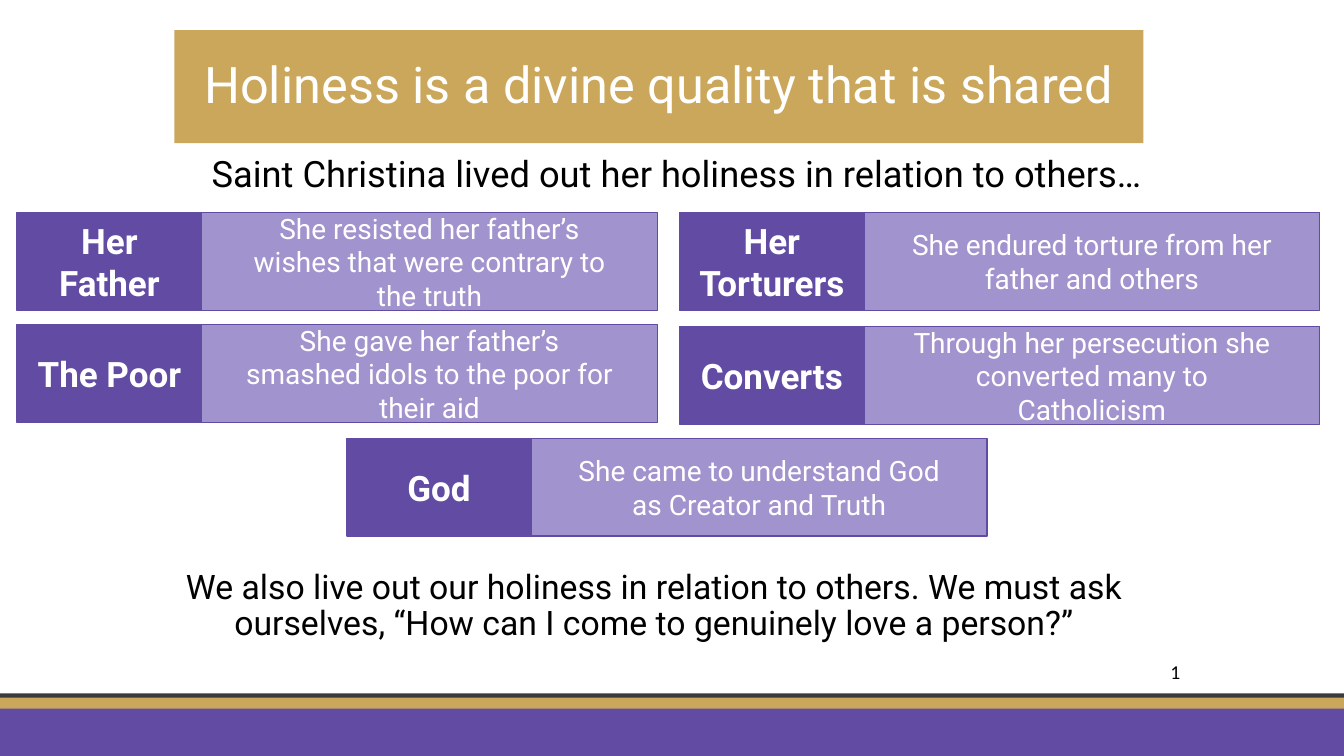
from pptx import Presentation
from pptx.dml.color import RGBColor
from pptx.enum import shapes, text
from pptx.util import Inches, Pt

WHITE = RGBColor(0xFF, 0xFF, 0xFF)
BLACK = RGBColor(0, 0, 0)
CHARCOAL = RGBColor(0x3A, 0x3A, 0x3A)
GOLD = RGBColor(0xCA, 0xA7, 0x5B)
PURPLE = RGBColor(0x61, 0x4B, 0xA3)
LAVENDER = RGBColor(0xA1, 0x93, 0xCD)

SLIDE_WIDTH, SLIDE_HEIGHT = 13.33, 7.5
LABEL_WIDTH, DETAIL_WIDTH, CARD_HEIGHT = 1.83, 4.52, 0.97
LEFT_COLUMN, MIDDLE_COLUMN, RIGHT_COLUMN = 0.17, 3.44, 6.74

CARDS = [
    (LEFT_COLUMN, 2.11, "Her Father", "She resisted her father’s wishes that were contrary to the truth"),
    (RIGHT_COLUMN, 2.11, "Her Torturers", "She endured torture from her father and others"),
    (LEFT_COLUMN, 3.22, "The Poor", "She gave her father’s smashed idols to the poor for their aid"),
    (RIGHT_COLUMN, 3.24, "Converts", "Through her persecution she converted many to Catholicism"),
    (MIDDLE_COLUMN, 4.35, "God", "She came to understand God as Creator and Truth"),
]


def add_rectangle(slide, box, fill, line=None):
    """Add a flat rectangle, outlined only when a line colour is given."""
    shape = slide.shapes.add_shape(shapes.MSO_SHAPE.RECTANGLE, *map(Inches, box))
    shape.shadow.inherit = False
    shape.fill.solid()
    shape.fill.fore_color.rgb = fill
    if line is None:
        shape.line.fill.background()
    else:
        shape.line.color.rgb = line
        shape.line.width = Pt(1)
    return shape


def write_text(shape, words, size, color, centered=True, middle=True,
               bold=False, spacing=1.0, font_name="Roboto"):
    """Put one formatted paragraph into a shape."""
    frame = shape.text_frame
    frame.word_wrap = True
    frame.vertical_anchor = text.MSO_ANCHOR.MIDDLE if middle else text.MSO_ANCHOR.TOP
    frame.text = words
    paragraph = frame.paragraphs[0]
    paragraph.alignment = text.PP_ALIGN.CENTER if centered else text.PP_ALIGN.LEFT
    paragraph.line_spacing = spacing
    font = paragraph.runs[0].font
    font.name, font.size, font.bold = font_name, Pt(size), bold
    font.color.rgb = color


def add_text(slide, box, words, size, **style):
    """Add a black, top-anchored text box."""
    textbox = slide.shapes.add_textbox(*map(Inches, box))
    write_text(textbox, words, size, BLACK, middle=False, **style)


def add_footer_bands(slide):
    """Draw the overlapping full-width bands at the foot of the slide."""
    for top, height, color in [(6.88, 0.06, CHARCOAL), (6.92, 0.12, GOLD), (7.03, 0.47, PURPLE)]:
        add_rectangle(slide, (0, top, SLIDE_WIDTH, height), color)


def add_title(slide, box, words):
    """Draw the gold title banner."""
    banner = add_rectangle(slide, box, GOLD)
    write_text(banner, words, 36, WHITE, spacing=0.9)


def add_card(slide, left, top, label, detail):
    """Draw a detail panel with its label on the left."""
    panel = add_rectangle(slide, (left + LABEL_WIDTH, top, DETAIL_WIDTH, CARD_HEIGHT), LAVENDER, PURPLE)
    frame = panel.text_frame
    frame.margin_left = frame.margin_right = Inches(0.4)
    frame.margin_top = frame.margin_bottom = Inches(0.1)
    write_text(panel, detail, 20, WHITE)
    heading = add_rectangle(slide, (left, top, LABEL_WIDTH, CARD_HEIGHT), PURPLE, PURPLE)
    write_text(heading, label, 25, WHITE, bold=True)


def main():
    """Build and save the slide."""
    presentation = Presentation()
    presentation.slide_width = Inches(SLIDE_WIDTH)
    presentation.slide_height = Inches(SLIDE_HEIGHT)
    slide = presentation.slides.add_slide(presentation.slide_layouts[6])
    add_footer_bands(slide)
    add_title(slide, (1.73, 0.3, 9.61, 1.12), "Holiness is a divine quality that is shared")
    add_text(slide, (2, 1.5, 9.51, 0.55),
             "Saint Christina lived out her holiness in relation to others…",
             25.9, centered=False, spacing=0.9)
    for card in CARDS:
        add_card(slide, *card)
    add_text(slide, (1.64, 5.61, 9.7, 1.06),
             "We also live out our holiness in relation to others. We must ask "
             "ourselves, “How can I come to genuinely love a person?”",
             24.1, spacing=0.9)
    add_text(slide, (11.51, 6.5, 0.83, 0.34), "1", 14, centered=False, font_name="Calibri")
    presentation.save("out.pptx")


if __name__ == "__main__":
    main()
